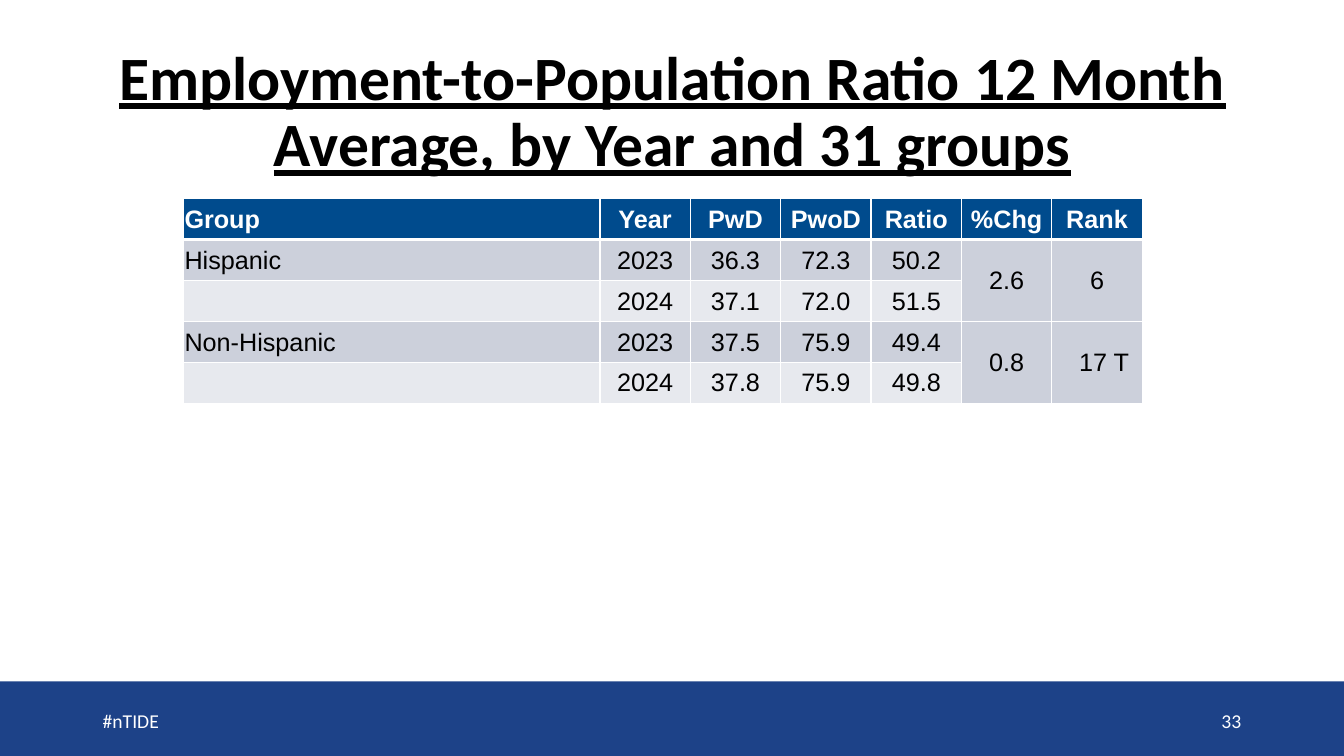
from lxml import etree
from pptx import Presentation
from pptx.dml.color import RGBColor
from pptx.enum import shapes, text
from pptx.oxml.ns import qn
from pptx.util import Inches, Pt

BLACK = RGBColor(0x00, 0x00, 0x00)
WHITE = RGBColor(0xFF, 0xFF, 0xFF)
FOOTER_BLUE = RGBColor(0x1D, 0x42, 0x88)
HEADER_BLUE = RGBColor(0x00, 0x4B, 0x8D)
BAND_DARK = RGBColor(0xCC, 0xD0, 0xDB)
BAND_LIGHT = RGBColor(0xE7, 0xE9, 0xEE)

HEADINGS = ("Group", "Year", "PwD", "PwoD", "Ratio", "%Chg", "Rank")
RATIOS = (
    ("Hispanic", "2023", "36.3", "72.3", "50.2", "2.6", "6"),
    ("", "2024", "37.1", "72.0", "51.5", "", ""),
    ("Non-Hispanic", "2023", "37.5", "75.9", "49.4", "0.8", "17 T"),
    ("", "2024", "37.8", "75.9", "49.8", "", ""),
)
MERGED_COLUMNS = (5, 6)


def write(paragraph, words, font, size, color, align, bold=False):
    """Add one formatted run to a paragraph and return the run."""
    paragraph.alignment = align
    run = paragraph.add_run()
    run.text = words
    run.font.name, run.font.size, run.font.bold = font, Pt(size), bold
    run.font.color.rgb = color
    return run


def add_heading(slide, left, top, width, height):
    """Place the underlined title in its placeholder."""
    heading = slide.shapes.title
    heading.left, heading.top = Inches(left), Inches(top)
    heading.width, heading.height = Inches(width), Inches(height)
    frame = heading.text_frame
    frame.vertical_anchor = text.MSO_ANCHOR.MIDDLE
    frame.word_wrap = True
    frame.auto_size = text.MSO_AUTO_SIZE.NONE
    paragraph = frame.paragraphs[0]
    paragraph.line_spacing = 0.9
    words = "Employment-to-Population Ratio 12 Month Average, by Year and 31 groups"
    run = write(paragraph, words, "Calibri", 44, BLACK, text.PP_ALIGN.CENTER, True)
    run.font.underline = True


def add_footer(slide, left, top, width, height):
    """Draw the blue band with the hashtag and the page number."""
    band = slide.shapes.add_shape(shapes.MSO_SHAPE.RECTANGLE, Inches(left),
                                  Inches(top), Inches(width), Inches(height))
    band.shadow.inherit = False
    band.fill.solid()
    band.fill.fore_color.rgb = FOOTER_BLUE
    band.line.fill.background()
    inset, label_width = 0.92, 3
    labels = (("#nTIDE", left + inset, text.PP_ALIGN.LEFT),
              ("33", left + width - inset - label_width, text.PP_ALIGN.RIGHT))
    for words, label_left, align in labels:
        label = slide.shapes.add_textbox(Inches(label_left), Inches(top + 0.19),
                                         Inches(label_width), Inches(0.4))
        frame = label.text_frame
        frame.word_wrap = True
        frame.vertical_anchor = text.MSO_ANCHOR.MIDDLE
        write(frame.paragraphs[0], words, "Calibri", 14, WHITE, align)


def set_borders(cell, bottom, top):
    """Give a cell white borders with the bottom and top widths in points."""
    properties = cell._tc.get_or_add_tcPr()
    for side, points in (("L", 1), ("R", 1), ("T", top), ("B", bottom)):
        line = etree.SubElement(properties, qn(f"a:ln{side}"), w=str(Pt(points)))
        fill = etree.SubElement(line, qn("a:solidFill"))
        etree.SubElement(fill, qn("a:srgbClr"), val=str(WHITE))


def add_ratio_table(slide, left, top, width, height):
    """Build the banded table of ratios with merged change and rank cells."""
    rows = (HEADINGS,) + RATIOS
    table = slide.shapes.add_table(len(rows), len(HEADINGS), Inches(left),
                                   Inches(top), Inches(width), Inches(height)).table
    group_width = 4.13
    value_width = (width - group_width) / (len(HEADINGS) - 1)
    for index, column in enumerate(table.columns):
        column.width = Inches(value_width if index else group_width)
    for r, row in enumerate(rows):
        for c, words in enumerate(row):
            cell = table.cell(r, c)
            set_borders(cell, bottom=1 if r else 3, top=3 if r == 1 else 1)
            cell.fill.solid()
            band = BAND_DARK if r % 2 else BAND_LIGHT
            cell.fill.fore_color.rgb = band if r else HEADER_BLUE
            cell.vertical_anchor = text.MSO_ANCHOR.MIDDLE
            cell.margin_left = Inches(0.15 if words == "17 T" else 0.01)
            cell.margin_right = cell.margin_top = Inches(0.01)
            cell.margin_bottom = 0
            if words:
                write(cell.text_frame.paragraphs[0], words, "Arial", 18,
                      BLACK if r else WHITE,
                      text.PP_ALIGN.CENTER if c else text.PP_ALIGN.LEFT, r == 0)
    for r in range(1, len(rows), 2):
        for c in MERGED_COLUMNS:
            table.cell(r, c).merge(table.cell(r + 1, c))


def main():
    """Build and save the slide."""
    deck = Presentation()
    deck.slide_width, deck.slide_height = Inches(13.33), Inches(7.5)
    slide = deck.slides.add_slide(deck.slide_layouts[5])
    add_footer(slide, 0, 6.76, 13.33, 0.74)
    add_heading(slide, 0.92, 0.4, 11.5, 1.45)
    add_ratio_table(slide, 1.82, 1.97, 9.51, 2.03)
    deck.save("out.pptx")


if __name__ == "__main__":
    main()
